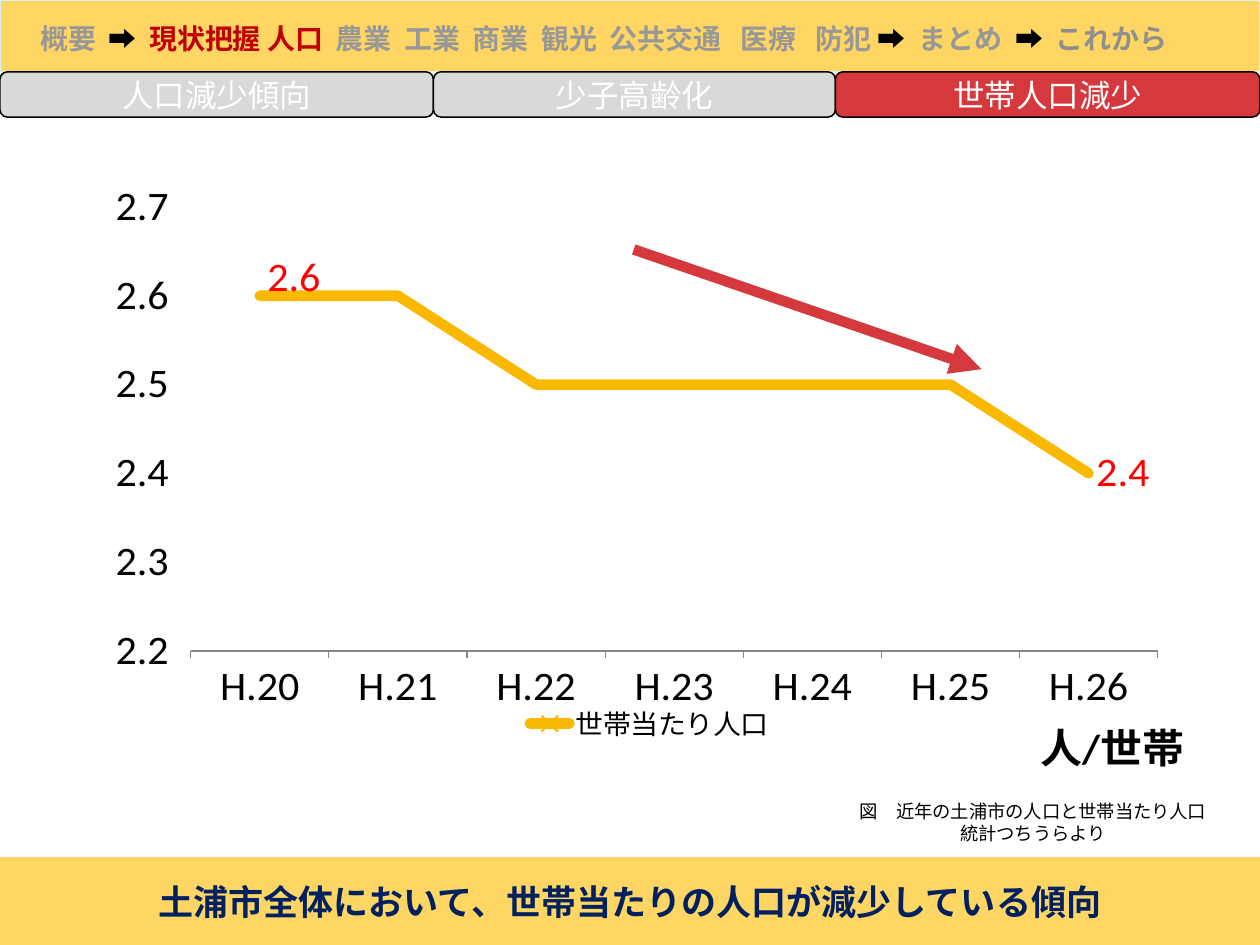
import pptx
import pptx.chart.data
import pptx.dml.color
import pptx.enum.chart
import pptx.enum.shapes
import pptx.enum.text
import pptx.oxml
import pptx.oxml.ns
import pptx.util

Inches = pptx.util.Inches
Pt = pptx.util.Pt
qn = pptx.oxml.ns.qn
SHAPE = pptx.enum.shapes.MSO_SHAPE
ALIGN = pptx.enum.text.PP_ALIGN
ANCHOR = pptx.enum.text.MSO_ANCHOR
CH = pptx.enum.chart

COLORS = {
    "band": "FFD663", "band_edge": "D9F1F6", "tab": "D9D9D9", "red": "D5393D",
    "white": "FFFFFF", "black": "000000", "navy": "002060", "muted": "989898",
    "next": "8F8F8F", "current": "C00000", "series": "FAB900",
    "label": "FF0000", "axis": "868686",
}
NAV = [
    ("概要  ", "muted"), ("➡  ", "black"), ("現状把握 人口  ", "current"),
    ("農業  工業  商業  観光  公共交通   医療   防犯 ", "muted"),
    ("➡  ", "black"), ("まとめ  ", "muted"), ("➡  ", "black"), ("これから", "next"),
]
TABS = [("人口減少傾向", 3.44, "tab"), ("少子高齢化", 3.19, "tab"), ("世帯人口減少", 3.37, "red")]
YEARS = [f"H.{n}" for n in range(20, 27)]
PEOPLE_PER_HOUSEHOLD = [2.6, 2.6, 2.5, 2.5, 2.5, 2.5, 2.4]


def rgb(name):
    return pptx.dml.color.RGBColor.from_string(COLORS[name])


def set_font(font, size, color, bold=False, name="Calibri"):
    font.size = Pt(size)
    font.bold = bold
    font.name = name
    font.color.rgb = rgb(color)


def write_text(sp, paragraphs, size, align=ALIGN.LEFT, anchor=ANCHOR.TOP,
               bold=False, font="Calibri", margin=None):
    tf = sp.text_frame
    tf.word_wrap = True
    tf.vertical_anchor = anchor
    if margin is not None:
        tf.margin_left = tf.margin_right = tf.margin_top = tf.margin_bottom = Inches(margin)
    for i, runs in enumerate(paragraphs):
        p = tf.add_paragraph() if i else tf.paragraphs[0]
        p.alignment = align
        for text, color in runs:
            r = p.add_run()
            r.text = text
            set_font(r.font, size, color, bold, font)


def add_box(s, kind, at, fill, line=None):
    sp = s.shapes.add_shape(kind, *map(Inches, at))
    sp.shadow.inherit = False
    sp.fill.solid()
    sp.fill.fore_color.rgb = rgb(fill)
    if line:
        sp.line.color.rgb = rgb(line)
        sp.line.width = Pt(0.85)
    else:
        sp.line.fill.background()
    return sp


def add_text(s, at, paragraphs, **fmt):
    write_text(s.shapes.add_textbox(*map(Inches, at)), paragraphs, **fmt)


def add_tabs(s):
    left = 0
    for text, width, fill in TABS:
        sp = add_box(s, SHAPE.ROUNDED_RECTANGLE, (left, 0.57, width, 0.36), fill, "black")
        write_text(sp, [[(text, "white")]], size=18, align=ALIGN.CENTER, anchor=ANCHOR.MIDDLE)
        left += width


def add_arrow(s, start, end, color, width):
    line = s.shapes.add_connector(pptx.enum.shapes.MSO_CONNECTOR.STRAIGHT,
                                  *map(Inches, start + end))
    line.line.color.rgb = rgb(color)
    line.line.width = Pt(width)
    ln = line.line._get_or_add_ln()
    pptx.oxml.ns and ln.append(ln.makeelement(qn("a:tailEnd"), {"type": "triangle"}))
    sp_pr = line._element.spPr
    sp_pr.append(sp_pr.makeelement(qn("a:effectLst"), {}))


def set_layout(parent, index, **values):
    layout = parent.find(qn("c:layout"))
    if layout is None:
        layout = parent.makeelement(qn("c:layout"), {})
        parent.insert(index, layout)
    manual = layout.makeelement(qn("c:manualLayout"), {})
    layout.append(manual)
    for tag, value in values.items():
        manual.append(manual.makeelement(qn(f"c:{tag}"), {"val": str(value)}))


def format_axes(chart):
    cat, val = chart.category_axis, chart.value_axis
    cat.format.line.color.rgb = rgb("axis")
    cat.major_tick_mark = val.major_tick_mark = CH.XL_TICK_MARK.OUTSIDE
    cat.has_major_gridlines = val.has_major_gridlines = False
    val.minimum_scale, val.maximum_scale, val.major_unit = 2.2, 2.7, 0.1
    val.tick_label_position = CH.XL_TICK_LABEL_POSITION.LOW
    val.tick_labels.number_format = "0.0_ "
    val.tick_labels.number_format_is_linked = False
    val.format.line.fill.background()
    tf = val.axis_title.text_frame
    tf.text = "人/世帯"
    set_font(tf.paragraphs[0].runs[0].font, 24, "black", bold=True)
    body = tf._txBody.find(qn("a:bodyPr"))
    body.set("rot", "0")
    body.set("vert", "horz")
    set_layout(val.axis_title._element, 1, xMode="edge", yMode="edge", x=0.85, y=0.9)


def format_series(ser):
    ser.smooth = False
    ser.format.line.color.rgb = rgb("series")
    ser.format.line.width = Pt(6)
    ser.format.line._get_or_add_ln().set("cap", "rnd")
    ser.marker.style = CH.XL_MARKER_STYLE.X
    ser.marker.size = 3
    ser.marker.format.fill.solid()
    ser.marker.format.fill.fore_color.rgb = rgb("series")
    ser.marker.format.line.color.rgb = rgb("series")


def format_labels(ser):
    labels = ser.data_labels
    labels.show_value = True
    labels.number_format = "0.0_ "
    labels.number_format_is_linked = False
    labels.position = CH.XL_LABEL_POSITION.RIGHT
    set_font(labels.font, 24, "label")
    first = ser.points[0].data_label
    set_font(first.font, 24, "label")
    first.position = CH.XL_LABEL_POSITION.RIGHT
    group = labels._element
    set_layout(group.find(qn("c:dLbl")), 1, x=0, y=-0.03)
    for i in range(1, len(YEARS) - 1):
        hidden = group.makeelement(qn("c:dLbl"), {})
        for tag, value in (("idx", i), ("delete", 1)):
            hidden.append(hidden.makeelement(qn(f"c:{tag}"), {"val": str(value)}))
        group.insert(i, hidden)


def add_line_chart(s, at):
    data = pptx.chart.data.CategoryChartData(number_format="0.0_ ")
    data.categories = YEARS
    data.add_series("世帯当たり人口", PEOPLE_PER_HOUSEHOLD)
    chart = s.shapes.add_chart(CH.XL_CHART_TYPE.LINE_MARKERS, *map(Inches, at), data).chart
    chart.has_title = False
    set_font(chart.font, 24, "black")
    chart.has_legend = True
    chart.legend.position = CH.XL_LEGEND_POSITION.BOTTOM
    chart.legend.include_in_layout = False
    set_font(chart.legend.font, 16, "black")
    set_layout(chart.legend._element, 1, xMode="edge", yMode="edge", x=0.4, y=0.89)
    plot = chart.plots[0]
    plot.vary_by_categories = False
    set_layout(plot._element.getparent(), 0, layoutTarget="inner", xMode="edge", yMode="edge",
               x=0.11, y=0.07, w=0.85, h=0.74)
    format_axes(chart)
    format_series(plot.series[0])
    format_labels(plot.series[0])


def main():
    prs = pptx.Presentation()
    prs.slide_width, prs.slide_height = Inches(10), Inches(7.5)
    s = prs.slides.add_slide(prs.slide_layouts[6])
    add_box(s, SHAPE.RECTANGLE, (0, 0, 10, 0.57), "band", "band_edge")
    add_text(s, (0.22, 0.01, 9.78, 0.59), [NAV], size=16, bold=True, anchor=ANCHOR.MIDDLE)
    add_box(s, SHAPE.RECTANGLE, (0, 6.81, 10, 0.69), "band", "band")
    add_text(s, (0, 6.94, 10, 0.44),
             [[("土浦市全体において、世帯当たりの人口が減少している傾向", "navy")]],
             size=20, bold=True, align=ALIGN.CENTER)
    add_tabs(s)
    caption = add_box(s, SHAPE.RECTANGLE, (6.41, 6.35, 3.58, 0.35), "white")
    write_text(caption, [[("図　近年の土浦市の人口と世帯当たり人口", "black")],
                         [("統計つちうらより", "black")]],
               size=10.5, align=ALIGN.CENTER, font="Times New Roman", margin=0)
    add_line_chart(s, (0.52, 1.31, 9.03, 4.94))
    add_arrow(s, (5.03, 1.98), (7.79, 2.93), "red", 6)
    prs.save("out.pptx")


if __name__ == "__main__":
    main()
